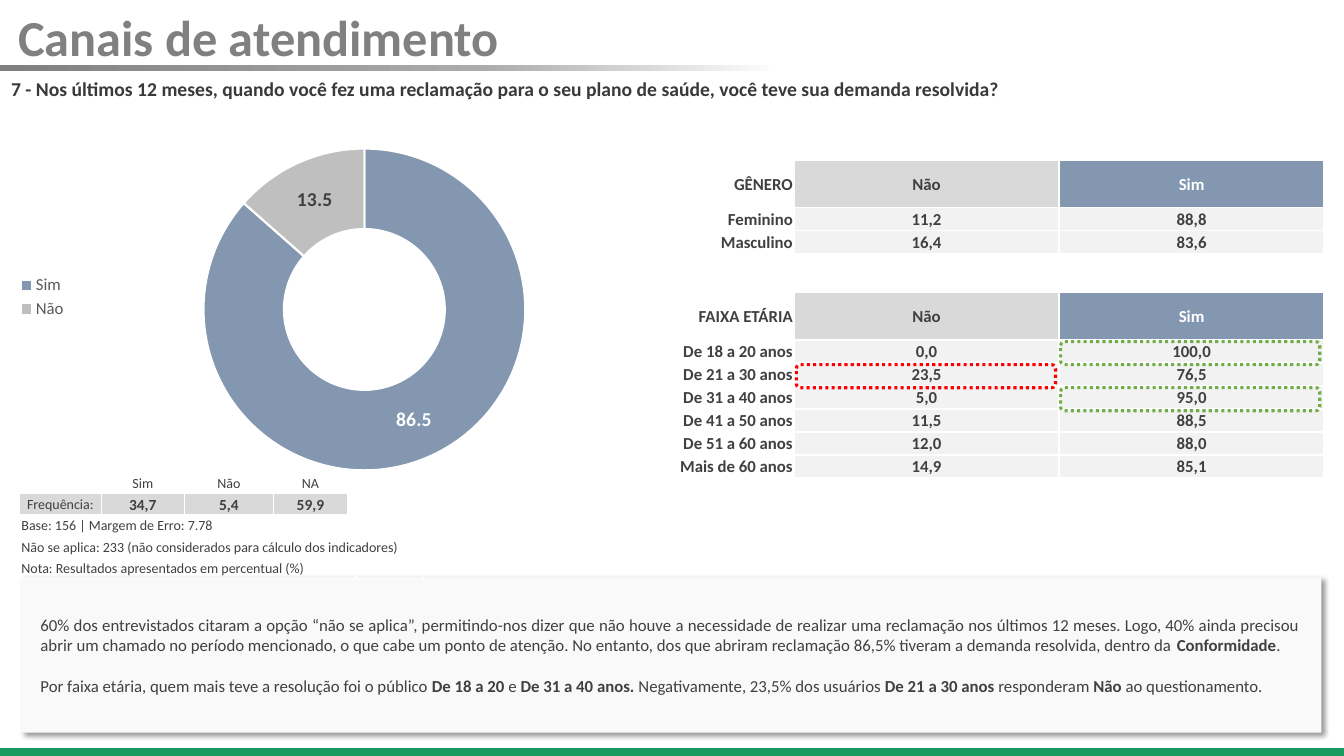
from lxml import etree
from pptx import Presentation
from pptx import util as u
from pptx.chart import data as chart_data
from pptx.dml import color
from pptx.enum import chart as chart_types, dml, shapes, text
from pptx.oxml import ns

COLORS = {
    "grey": "808080", "mid": "ABABAB", "white": "FFFFFF", "green": "18995E",
    "question": "3B3838", "text": "404040", "legend": "595959", "blue": "8497B0",
    "silver": "BFBFBF", "header": "D9D9D9", "cell": "F2F2F2", "panel": "F9F9F9",
    "worst": "FF0000", "best": "70AD47",
}
ALIGN = text.PP_ALIGN
MIDDLE = text.MSO_ANCHOR.MIDDLE
GROUP_ROW, AGE_ROW = 1.19, 0.58
RATES = [
    ("GÊNERO", "Não", "Sim"),
    ("Feminino", "11,2", "88,8"),
    ("Masculino", "16,4", "83,6"),
    ("", "", ""),
    ("FAIXA ETÁRIA", "Não", "Sim"),
    ("De 18 a 20 anos", "0,0", "100,0"),
    ("De 21 a 30 anos", "23,5", "76,5"),
    ("De 31 a 40 anos", "5,0", "95,0"),
    ("De 41 a 50 anos", "11,5", "88,5"),
    ("De 51 a 60 anos", "12,0", "88,0"),
    ("Mais de 60 anos", "14,9", "85,1"),
]
NOTES = [
    ("Base: 156 | Margem de Erro: 7.78", ""),
    ("Não se aplica: 233 (não considerados para cálculo dos indicadores)", ""),
    ("Nota: Resultados apresentados em percentual (%)", ""),
]
FREQUENCY = [("", "Sim", "Não", "NA"), ("Frequência:", "34,7", "5,4", "59,9")]
COMMENTS = [
    [("60% dos entrevistados citaram a opção “não se aplica”, permitindo-nos dizer que não houve "
      "a necessidade de realizar uma reclamação nos últimos 12 meses. Logo, 40% ainda precisou "
      "abrir um chamado no período mencionado, o que cabe um ponto de atenção. No entanto, dos "
      "que abriram reclamação 86,5% tiveram a demanda resolvida, dentro da ", False),
     ("Conformidade", True), (".", False)],
    [("Por faixa etária, quem mais teve a resolução foi o público ", False),
     ("De 18 a 20 ", True), ("e ", False), ("De 31 a 40 anos. ", True),
     ("Negativamente, 23,5% dos usuários ", False), ("De 21 a 30 anos ", True),
     ("responderam ", False), ("Não ", True), ("ao questionamento.", False)],
]


def rgb(name):
    return color.RGBColor.from_string(COLORS[name])


def apply(target, values):
    for name, value in values.items():
        setattr(target, name, value)


def style_font(font, size, shade="text", bold=False):
    apply(font, {"name": "Calibri", "size": u.Pt(size), "bold": bold})
    font.color.rgb = rgb(shade)


def add_span(para, words, size, shade="text", bold=False):
    span = para.add_run()
    span.text = words
    style_font(span.font, size, shade, bold)


def add_xml(parent, tag, **attributes):
    return etree.SubElement(parent, ns.qn(tag), attributes)


def add_box(page, kind, place, fill=None):
    box = page.shapes.add_shape(kind, *map(u.Cm, place))
    box.shadow.inherit = False
    box.line.fill.background()
    if fill:
        box.fill.solid()
        box.fill.fore_color.rgb = rgb(fill)
    else:
        box.fill.background()
    return box


def add_bars(page):
    rule = add_box(page, shapes.MSO_SHAPE.RECTANGLE, (0, 1.65, 21.67, 0.13))
    rule.fill.gradient()
    rule.fill.gradient_angle = 0
    stops = rule.fill._fill._gradFill.find(ns.qn("a:gsLst"))
    stops.clear()
    for position, shade in ((0, "grey"), (56, "mid"), (91, "white")):
        stop = add_xml(stops, "a:gs", pos=str(position * 1000))
        add_xml(stop, "a:srgbClr", val=COLORS[shade])
    add_box(page, shapes.MSO_SHAPE.RECTANGLE, (0, 18.85, 33.87, 0.2), "green")


def add_headings(page):
    title = page.shapes.title
    apply(title, dict(zip(("left", "top", "width", "height"),
                          map(u.Cm, (0.2, 0.15, 33.3, 1.73)))))
    apply(title.text_frame, {"vertical_anchor": MIDDLE, "word_wrap": True,
                             "auto_size": text.MSO_AUTO_SIZE.NONE})
    para = title.text_frame.paragraphs[0]
    apply(para, {"alignment": ALIGN.LEFT, "line_spacing": 0.9})
    add_span(para, "Canais de atendimento", 36, "grey", True)

    question = page.shapes.add_textbox(*map(u.Cm, (0, 1.78, 33.07, 0.89))).text_frame
    apply(question, {"word_wrap": True, "margin_left": u.Cm(0.28), "margin_right": u.Cm(0.28),
                     "margin_top": u.Cm(0.15), "margin_bottom": u.Cm(0.15)})
    para = question.paragraphs[0]
    para.alignment = ALIGN.JUSTIFY
    add_span(para, "7 - Nos últimos 12 meses, quando você fez uma reclamação para o seu plano de "
             "saúde, você teve sua demanda resolvida?", 14, "question", True)


def fill_cell(cell, words, size, shade="text", bold=False, align=ALIGN.LEFT, fill=None, border=False):
    apply(cell, {"vertical_anchor": MIDDLE, "margin_left": u.Cm(0.03), "margin_right": u.Cm(0.03),
                 "margin_top": u.Cm(0.03), "margin_bottom": 0})
    para = cell.text_frame.paragraphs[0]
    para.alignment = align
    if words:
        add_span(para, words, size, shade, bold)
    else:
        add_xml(para._p, "a:endParaRPr", sz=str(size * 100))
    if border:
        for side in ("L", "R", "T", "B"):
            line = add_xml(cell._tc.get_or_add_tcPr(), f"a:ln{side}", w=str(u.Pt(1.5)))
            add_xml(add_xml(line, "a:solidFill"), "a:srgbClr", val=COLORS["white"])
    if fill:
        cell.fill.solid()
        cell.fill.fore_color.rgb = rgb(fill)
    else:
        cell.fill.background()


def add_grid(page, corner, widths, heights, rows, cell_format):
    size = (sum(widths), sum(heights))
    frame = page.shapes.add_table(len(heights), len(widths), *map(u.Cm, (*corner, *size)))
    table = frame.table
    apply(table, {"first_row": False, "horz_banding": False})
    for column, width in zip(table.columns, widths):
        column.width = u.Cm(width)
    for i, (row, height) in enumerate(zip(rows, heights)):
        table.rows[i].height = u.Cm(height)
        for j, words in enumerate(row):
            fill_cell(table.cell(i, j), words, **cell_format(row, i, j))
    return table


def rate_format(row, i, j):
    values = {"size": 12, "bold": True, "align": ALIGN.CENTER if j else ALIGN.RIGHT, "border": j > 0}
    if j and row[j] == "Sim":
        values.update(fill="blue", shade="white")
    elif j and row[j]:
        values["fill"] = "header" if row[j] == "Não" else "cell"
    return values


def note_format(row, i, j):
    return {"size": 10}


def frequency_format(row, i, j):
    number = i == 1 and j > 0
    return {"size": 11 if number else 10, "bold": number, "align": ALIGN.CENTER,
            "fill": "header" if i else None}


def add_highlight(page, age, left, shade):
    place = (left, 8.61 + AGE_ROW * age, 6.53, AGE_ROW)
    box = add_box(page, shapes.MSO_SHAPE.ROUNDED_RECTANGLE, place)
    box.line.color.rgb = rgb(shade)
    apply(box.line, {"width": u.Pt(2.25), "dash_style": dml.MSO_LINE.ROUND_DOT})


def add_comments(page):
    panel = add_box(page, shapes.MSO_SHAPE.RECTANGLE, (0.51, 14.55, 32.79, 3.91), "panel")
    effects = panel._element.spPr.find(ns.qn("a:effectLst"))
    shadow = add_xml(effects, "a:outerShdw", blurRad=str(u.Pt(4)), dist=str(u.Pt(3)),
                     dir="2700000", algn="tl", rotWithShape="0")
    add_xml(add_xml(shadow, "a:srgbClr", val="000000"), "a:alpha", val="40000")
    frame = panel.text_frame
    apply(frame, {"word_wrap": True, "vertical_anchor": MIDDLE, "margin_left": u.Cm(0.51),
                  "margin_right": u.Cm(0.51), "margin_top": u.Cm(0.1), "margin_bottom": u.Cm(0.1)})
    for i, spans in enumerate(COMMENTS):
        para = frame.add_paragraph() if i else frame.paragraphs[0]
        para.alignment = ALIGN.JUSTIFY
        if i:
            para.space_before = u.Pt(14.6)
        for words, bold in spans:
            add_span(para, words, 12, bold=bold)


def add_doughnut(page):
    data = chart_data.CategoryChartData()
    data.categories = ["Sim", "Não"]
    data.add_series("Series 1", (86.5, 13.5))
    chart = page.shapes.add_chart(chart_types.XL_CHART_TYPE.DOUGHNUT,
                                  *map(u.Cm, (0.2, 3, 15.9, 8.97)), data).chart
    apply(chart, {"has_title": False, "has_legend": True})
    style_font(chart.font, 11)
    apply(chart.legend, {"position": chart_types.XL_LEGEND_POSITION.LEFT, "include_in_layout": False})
    style_font(chart.legend.font, 12, "legend")
    plot = chart.plots[0]
    apply(plot, {"vary_by_categories": True, "has_data_labels": True})
    series = plot.series[0]
    labels = series.data_labels
    apply(labels, {"show_value": True, "show_percentage": False,
                   "number_format": "0.0", "number_format_is_linked": False})
    style_font(labels.font, 14, bold=True)
    for i, shade in enumerate(("blue", "silver")):
        look = series.points[i].format
        look.fill.solid()
        look.fill.fore_color.rgb = rgb(shade)
        look.line.color.rgb = rgb("white")
        look.line.width = u.Pt(1.5)
    style_font(series.points[0].data_label.font, 14, "white", True)

    area = chart._chartSpace.chart.plotArea
    for old in area.findall(ns.qn("c:layout")):
        area.remove(old)
    layout = etree.Element(ns.qn("c:layout"))
    area.insert(0, layout)
    manual = add_xml(layout, "c:manualLayout")
    for tag, value in (("layoutTarget", "inner"), ("xMode", "edge"), ("yMode", "edge"),
                       ("x", "0.31"), ("y", "0.08"), ("w", "0.51"), ("h", "0.91")):
        add_xml(manual, f"c:{tag}", val=value)


def main():
    deck = Presentation()
    apply(deck, {"slide_width": u.Cm(33.87), "slide_height": u.Cm(19.05)})
    page = deck.slides.add_slide(deck.slide_layouts[5])
    add_bars(page)
    add_headings(page)
    heights = [GROUP_ROW, AGE_ROW, AGE_ROW, 0.98, GROUP_ROW] + [AGE_ROW] * 6
    add_grid(page, (15.67, 4.04), (4.34, 6.68, 6.68), heights, RATES, rate_format)
    add_comments(page)
    notes = add_grid(page, (0.51, 12.98), (8.46, 1.7), [0.53] * 3, NOTES, note_format)
    notes.cell(1, 0).merge(notes.cell(1, 1))
    add_doughnut(page)
    for age, left, shade in ((1, 20.07, "worst"), (0, 26.73, "best"), (2, 26.73, "best")):
        add_highlight(page, age, left, shade)
    add_grid(page, (0.48, 11.91), (2.08, 2.08, 2.26, 1.85), [0.53] * 2, FREQUENCY, frequency_format)
    deck.save("out.pptx")


if __name__ == "__main__":
    main()
